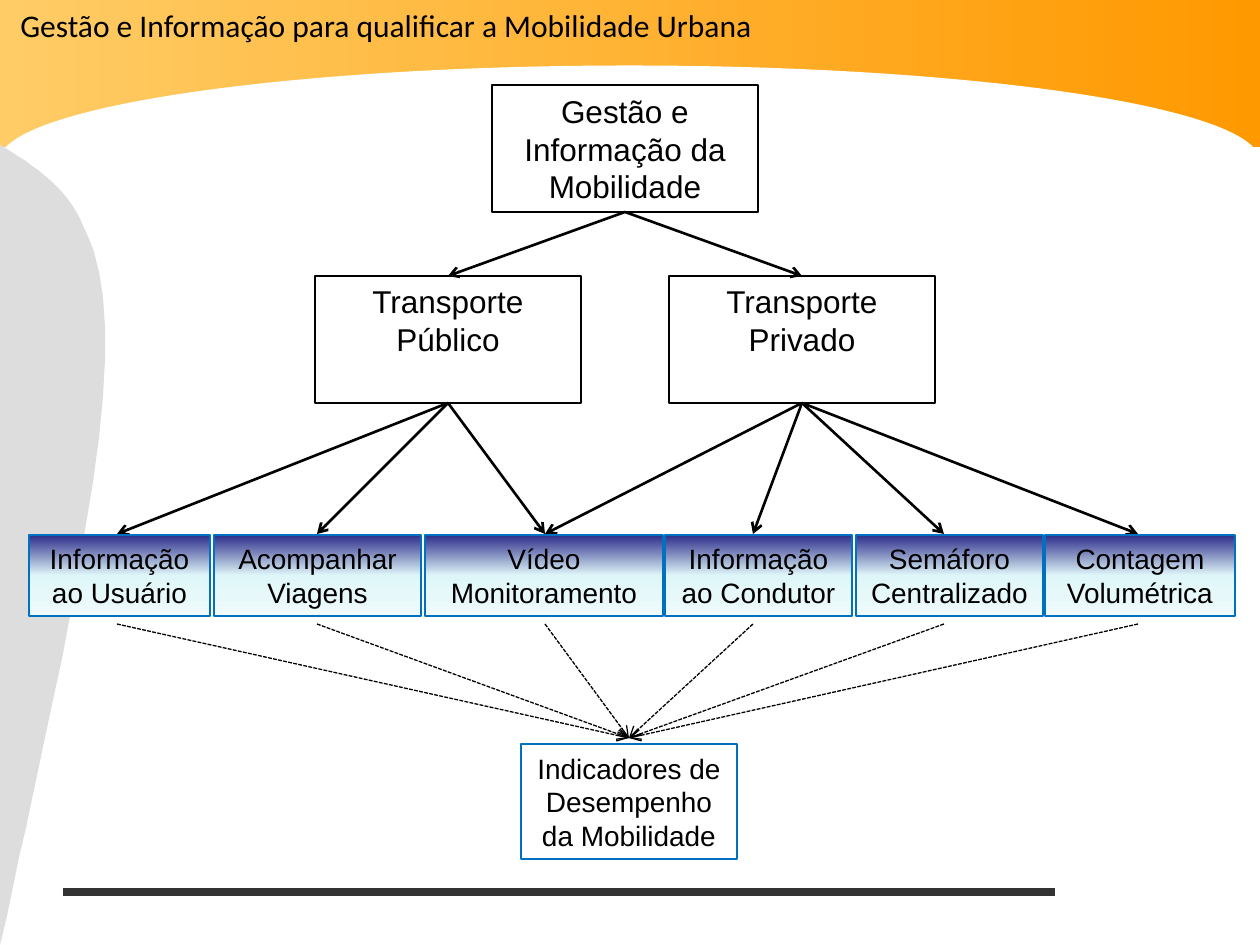
import copy
from dataclasses import dataclass

import pptx
import pptx.util
from pptx.dml.color import RGBColor
from pptx.enum.dml import MSO_LINE
from pptx.enum.shapes import MSO_CONNECTOR, MSO_SHAPE
from pptx.enum.text import MSO_ANCHOR, PP_ALIGN
from pptx.oxml.ns import qn
from pptx.oxml.xmlchemy import OxmlElement

SCALE = 914400 / 126  # EMU per px


@dataclass(frozen=True)
class Theme:
    black: str = "000000"
    white: str = "FFFFFF"
    blue: str = "0070C0"
    rule: str = "333333"
    swoosh: str = "DDDDDD"
    banner: tuple = ((0, "FFCC66"), (1, "FF9900"))
    leaf: tuple = ((0, "2D2D8A"), (0.5, "DFF6F8"), (1, "EFFAFB"))
    body_font: str = "Arial"
    title_font: str = "Calibri"
    large: int = 18
    small: int = 16


THEME = Theme()

TITLE = "Gestão e Informação para qualificar a Mobilidade Urbana"
ROOT = ["Gestão e Informação da Mobilidade"]
BRANCH_WIDTH, BRANCH_HEIGHT = 266, 127
# left, lines, outline width, indexes of the leaves below
BRANCHES = [
    (315, ["Transporte", "Público"], 1, (0, 1, 2)),
    (669, ["Transporte Privado"], 0.75, (2, 3, 4, 5)),
]
LEAF_TOP, LEAF_HEIGHT = 535, 81
ARROW_IN, ARROW_OUT = 534, 624
# left, width, x of its arrows, lines
LEAVES = [
    (29, 181, 117, ["Informação", "ao Usuário"]),
    (214, 207, 317, ["Acompanhar", "Viagens"]),
    (425, 238, 545, ["Vídeo", "Monitoramento"]),
    (665, 187, 753, ["Informação", "ao Condutor"]),
    (856, 187, 944, ["Semáforo", "Centralizado"]),
    (1045, 190, 1138, ["Contagem", "Volumétrica"]),
]
INDICATORS = ["Indicadores de", "Desempenho", "da Mobilidade"]
INDICATORS_ARROW = (629, 738)
SWOOSH_START = (0, 145)
SWOOSH_CURVES = [
    [(52, 176), (105, 209), (105, 343)],
    [(105, 475), (52, 711), (0, 945)],
]


def px(value):
    return pptx.util.Emu(round(value * SCALE))


def paint(fill, color):
    fill.solid()
    fill.fore_color.rgb = RGBColor.from_string(color)


def paint_gradient(shape, stops, angle):
    shape.fill.gradient()
    shape.fill.gradient_angle = angle
    stop_list = shape._element.spPr.find(".//" + qn("a:gsLst"))
    while len(stop_list) < len(stops):
        stop_list.append(copy.deepcopy(stop_list[-1]))
    for stop, (position, color) in zip(shape.fill.gradient_stops, stops):
        stop.position = position
        stop.color.rgb = RGBColor.from_string(color)


def add_shape(slide, kind, left, top, width, height):
    shape = slide.shapes.add_shape(kind, px(left), px(top), px(width), px(height))
    shape.shadow.inherit = False
    shape.line.fill.background()
    return shape


def write(frame, lines, size, font):
    for index, line in enumerate(lines):
        paragraph = frame.paragraphs[0] if index == 0 else frame.add_paragraph()
        paragraph.text = line
        paragraph.alignment = PP_ALIGN.CENTER
        paragraph.font.size = pptx.util.Pt(size)
        paragraph.font.name = font
        paragraph.font.color.rgb = RGBColor.from_string(THEME.black)


def add_box(slide, place, lines, size, outline, weight, anchor=MSO_ANCHOR.MIDDLE):
    box = add_shape(slide, MSO_SHAPE.RECTANGLE, *place)
    paint(box.fill, THEME.white)
    paint(box.line.fill, outline)
    box.line.width = pptx.util.Pt(weight)
    box.text_frame.word_wrap = True
    box.text_frame.vertical_anchor = anchor
    write(box.text_frame, lines, size, THEME.body_font)
    return box


def add_line(slide, start, end, weight, color=THEME.black, dash=None, arrow=True):
    """Ends are (x, y) in px, or (shape, side) to join a shape."""
    connector = slide.shapes.add_connector(MSO_CONNECTOR.STRAIGHT, 0, 0, 0, 0)
    if isinstance(start[0], int):
        connector.begin_x, connector.begin_y = map(px, start)
    else:
        connector.begin_connect(*start)
    if isinstance(end[0], int):
        connector.end_x, connector.end_y = map(px, end)
    else:
        connector.end_connect(*end)
    paint(connector.line.fill, color)
    connector.line.width = pptx.util.Pt(weight)
    if dash:
        connector.line.dash_style = dash
    if arrow:
        tail = OxmlElement("a:tailEnd")
        tail.set("type", "arrow")
        connector.line._get_or_add_ln().append(tail)
    connector._element.spPr.append(OxmlElement("a:effectLst"))


def curve_points(start, curves, steps=24):
    """Points along a chain of cubic Bézier curves."""
    for first, second, end in curves:
        for step in range(1, steps + 1):
            t = step / steps
            u = 1 - t
            yield tuple(
                u**3 * a + 3 * u * u * t * b + 3 * u * t * t * c + t**3 * d
                for a, b, c, d in zip(start, first, second, end)
            )
        start = end


def add_background(slide):
    banner = add_shape(slide, MSO_SHAPE.RECTANGLE, 0, 0, 1260, 147)
    paint_gradient(banner, THEME.banner, 0)
    arch = add_shape(slide, MSO_SHAPE.MOON, 582, -517, 95, 1260)
    arch.adjustments[0] = 0.875
    arch.rotation = 90
    paint(arch.fill, THEME.white)
    builder = slide.shapes.build_freeform(*SWOOSH_START, scale=SCALE)
    builder.add_line_segments(list(curve_points(SWOOSH_START, SWOOSH_CURVES)))
    swoosh = builder.convert_to_shape()
    swoosh.shadow.inherit = False
    swoosh.line.fill.background()
    paint(swoosh.fill, THEME.swoosh)
    add_line(slide, (63, 892), (1055, 892), 4.5, THEME.rule, arrow=False)


def add_diagram(slide):
    root = add_box(slide, (492, 85, BRANCH_WIDTH, BRANCH_HEIGHT), ROOT,
                   THEME.large, THEME.black, 1)
    for left, lines, weight, children in BRANCHES:
        branch = add_box(slide, (left, 276, BRANCH_WIDTH, BRANCH_HEIGHT), lines,
                         THEME.large, THEME.black, weight, MSO_ANCHOR.TOP)
        add_line(slide, (root, 2), (branch, 0), 1.5)
        for child in children:
            add_line(slide, (branch, 2), (LEAVES[child][2], ARROW_IN), 1.5)
    add_box(slide, (521, 744, 216, 115), INDICATORS, THEME.small, THEME.blue, 0.75)
    for left, width, arrow_x, lines in LEAVES:
        leaf = add_box(slide, (left, LEAF_TOP, width, LEAF_HEIGHT), lines,
                       THEME.small, THEME.blue, 0.75)
        paint_gradient(leaf, THEME.leaf, 270)
        add_line(slide, (arrow_x, ARROW_OUT), INDICATORS_ARROW, 0.75,
                 dash=MSO_LINE.SQUARE_DOT)


def add_title(slide):
    title = slide.shapes.add_textbox(0, 0, px(772), px(50))
    title.text_frame.word_wrap = False
    write(title.text_frame, [TITLE], THEME.large, THEME.title_font)


def main():
    presentation = pptx.Presentation()
    presentation.slide_width, presentation.slide_height = px(1260), px(945)
    slide = presentation.slides.add_slide(presentation.slide_layouts[6])
    add_background(slide)
    add_diagram(slide)
    add_title(slide)
    presentation.save("out.pptx")


if __name__ == "__main__":
    main()
